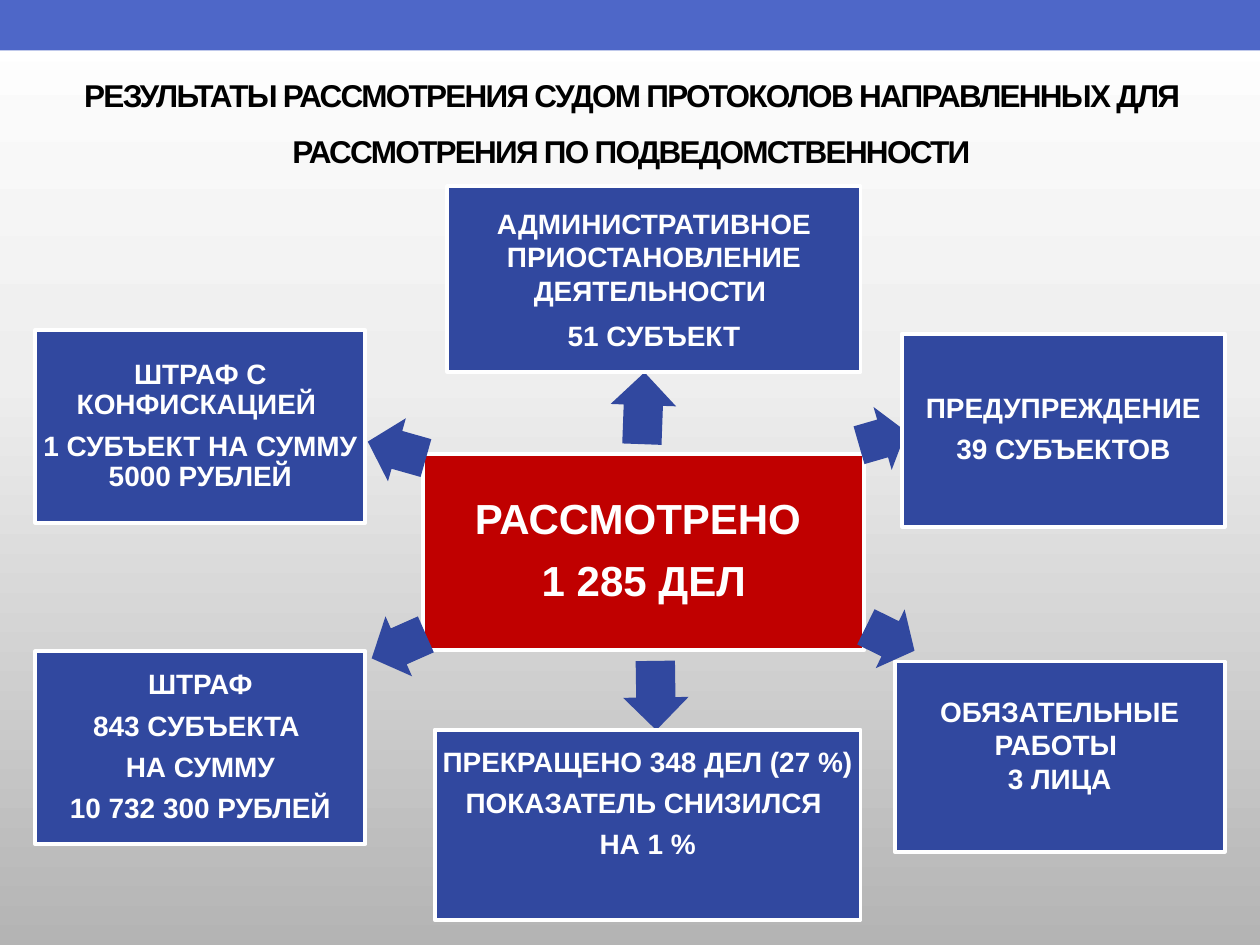
from copy import deepcopy

from pptx import Presentation
from pptx.dml.color import RGBColor
from pptx.enum import shapes, text
from pptx.oxml import ns
from pptx.util import Inches, Pt


def paint(fill, color):
    fill.solid()
    fill.fore_color.rgb = RGBColor.from_string(color)


def add_block(kind, place, color, lines=(), size=16, spacing=0.9, after=6.3, inset=0.02, bottom=0.02, border=True):
    block = slide.shapes.add_shape(kind, *[Inches(value) for value in place])
    block.shadow.inherit = False
    paint(block.fill, color)
    if border:
        paint(block.line.fill, "FFFFFF")
        block.line.width = Pt(2.25)
    else:
        block.line.fill.background()
    frame = block.text_frame
    frame.word_wrap = True
    frame.vertical_anchor = text.MSO_ANCHOR.MIDDLE
    frame.margin_left = frame.margin_right = frame.margin_top = Inches(inset)
    frame.margin_bottom = Inches(bottom)
    for index, line in enumerate(lines):
        paragraph = frame.add_paragraph() if index else frame.paragraphs[0]
        paragraph.alignment = text.PP_ALIGN.CENTER
        paragraph.line_spacing = spacing
        paragraph.space_after = Pt(after)
        run = paragraph.add_run()
        run.text = line
        run.font.name = "Arial"
        run.font.size = Pt(size)
        run.font.bold = True
        paint(run.font.fill, "FFFFFF")
    return block


RECT = shapes.MSO_SHAPE.RECTANGLE
ARROW = shapes.MSO_SHAPE.RIGHT_ARROW
BLUE = "31489F"

prs = Presentation()
prs.slide_width, prs.slide_height = Inches(10), Inches(7.5)
slide = prs.slides.add_slide(prs.slide_layouts[6])

backdrop = slide.background.fill
backdrop.gradient()
backdrop.gradient_angle = 270
stop_list = next(slide.background._cSld.iter(ns.qn("a:gsLst")))
stop_list.append(deepcopy(stop_list[-1]))
shades = [(0, "FFFFFF"), (0.4, "EEEEEE"), (1, "B4B4B4")]
for stop, (position, shade) in zip(backdrop.gradient_stops, shades):
    stop.position = position
    stop.color.rgb = RGBColor.from_string(shade)

add_block(RECT, (0, 0.24, 10, 0.25), "FFFFFF", border=False)
add_block(RECT, (0, 0, 10, 0.4), "4E67C8", border=False)

title = slide.shapes.add_textbox(Inches(0.51), Inches(0.36), Inches(9), Inches(1.08))
title.text_frame.word_wrap = True
title.text_frame.vertical_anchor = text.MSO_ANCHOR.MIDDLE
heading = title.text_frame.paragraphs[0]
heading.alignment = text.PP_ALIGN.CENTER
heading.line_spacing = 1.5
heading_run = heading.add_run()
heading_run.text = "РЕЗУЛЬТАТЫ РАССМОТРЕНИЯ СУДОМ ПРОТОКОЛОВ НАПРАВЛЕННЫХ ДЛЯ РАССМОТРЕНИЯ ПО ПОДВЕДОМСТВЕННОСТИ"
heading_run.font.name = "Arial"
heading_run.font.size = Pt(18)
heading_run.font.bold = True
paint(heading_run.font.fill, "000000")
heading_run._r.get_or_add_rPr().set("spc", "-100")

add_block(RECT, (3.36, 3.6, 3.5, 1.56), "C00000", ["РАССМОТРЕНО ", "1 285 ДЕЛ"],
          size=24, after=9.5, inset=0.03, bottom=0.03)

outcomes = [
    ((4.82, 2.98, 0.57, 0.52), 272.1, (3.55, 1.48, 3.28, 1.47),
     ["АДМИНИСТРАТИВНОЕ ПРИОСТАНОВЛЕНИЕ ДЕЯТЕЛЬНОСТИ ", "51 СУБЪЕКТ"], {"spacing": 1}),
    ((6.81, 3.22, 0.39, 0.52), 343.9, (7.16, 2.65, 2.56, 1.53),
     ["ПРЕДУПРЕЖДЕНИЕ", "39 СУБЪЕКТОВ"], {}),
    ((6.85, 4.81, 0.43, 0.52), 26.2, (7.1, 5.25, 2.62, 1.51),
     ["ОБЯЗАТЕЛЬНЫЕ РАБОТЫ ", "3 ЛИЦА"], {"spacing": 1, "after": 0, "bottom": 0.21}),
    ((2.93, 4.87, 0.47, 0.52), 156.1, (0.28, 5.17, 2.62, 1.53),
     ["ШТРАФ", "843 СУБЪЕКТА ", "НА СУММУ", "10 732 300 РУБЛЕЙ"], {}),
    ((4.93, 5.26, 0.55, 0.52), 89.2, (3.45, 5.79, 3.38, 1.51),
     ["ПРЕКРАЩЕНО 348 ДЕЛ (27 %)", "ПОКАЗАТЕЛЬ СНИЗИЛСЯ ", "НА 1 %"], {"bottom": 0.34}),
    ((2.91, 3.31, 0.48, 0.52), 195.8, (0.28, 2.62, 2.62, 1.53),
     ["ШТРАФ С КОНФИСКАЦИЕЙ ", "1 СУБЪЕКТ НА СУММУ 5000 РУБЛЕЙ"], {}),
]
for arrow_place, angle, box_place, lines, layout in outcomes:
    arrow = add_block(ARROW, arrow_place, BLUE, border=False)
    arrow.rotation = angle
    arrow.adjustments[0] = 0.6
    arrow.adjustments[1] = 0.5
    add_block(RECT, box_place, BLUE, lines, **layout)

prs.save("out.pptx")
